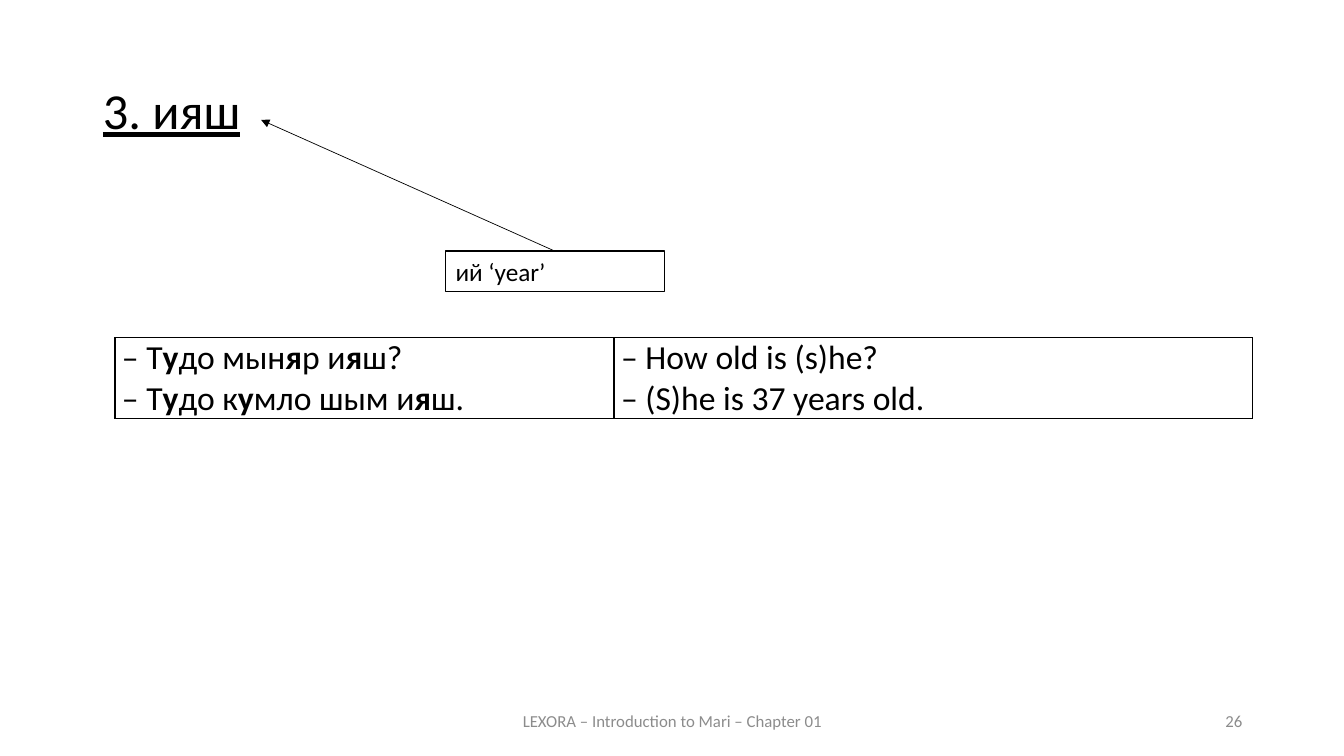
from dataclasses import dataclass

from lxml import etree
from pptx import Presentation
from pptx.dml.color import RGBColor
from pptx.enum import shapes, text
from pptx.oxml import ns
from pptx.util import Inches, Pt

FONT = "Calibri"
BLACK, GREY, WHITE = "000000", "8C8C8C", "FFFFFF"
ALIGN = text.PP_ALIGN


@dataclass
class FooterText:
    left: float
    width: float
    words: str
    align: ALIGN


FOOTERS = [
    FooterText(4.42, 4.5, "LEXORA – Introduction to Mari – Chapter 01", ALIGN.CENTER),
    FooterText(9.42, 3, "26", ALIGN.RIGHT),
]

# Asterisks enclose the stressed vowels, which are set in bold
DIALOGUE = [
    ["– Т*у*до мын*я*р и*я*ш?", "– Т*у*до к*у*мло шым и*я*ш."],
    ["– How old is (s)he?", "– (S)he is 37 years old."],
]
COLUMN_WIDTHS = [4.95, 6.33]


def rgb(value: str) -> RGBColor:
    return RGBColor.from_string(value)


def write(p, words: str, size: float, color: str = BLACK, align=None) -> None:
    """Fill a paragraph, with bold for the parts between asterisks."""
    p.alignment = align
    for i, part in enumerate(words.split("*")):
        r = p.add_run()
        r.text = part
        r.font.name, r.font.size = FONT, Pt(size)
        r.font.bold = i % 2 == 1
        r.font.color.rgb = rgb(color)


def add_footer(s, footer: FooterText) -> None:
    sp = s.shapes.add_textbox(Inches(footer.left), Inches(6.95),
                              Inches(footer.width), Inches(0.4))
    tf = sp.text_frame
    tf.word_wrap = True
    tf.vertical_anchor = text.MSO_ANCHOR.MIDDLE
    write(tf.paragraphs[0], footer.words, 12, GREY, footer.align)


def add_borders(cell) -> None:
    """Draw a thin black line on each side of a cell."""
    tc_pr = cell._tc.get_or_add_tcPr()
    for i, side in enumerate(("lnL", "lnR", "lnT", "lnB")):
        ln = etree.Element(ns.qn(f"a:{side}"), w=str(Pt(1)))
        fill = etree.SubElement(ln, ns.qn("a:solidFill"))
        etree.SubElement(fill, ns.qn("a:srgbClr"), val=BLACK)
        tc_pr.insert(i, ln)


def add_dialogue(s) -> None:
    table = s.shapes.add_table(1, len(DIALOGUE), Inches(1.14), Inches(3.35),
                               Inches(sum(COLUMN_WIDTHS)), Inches(0.8)).table
    table.first_row = table.horz_banding = False
    for column, width, cell, lines in zip(table.columns, COLUMN_WIDTHS,
                                          table.rows[0].cells, DIALOGUE):
        column.width = Inches(width)
        cell.margin_left = cell.margin_right = Inches(0.07)
        cell.margin_top = cell.margin_bottom = 0
        cell.fill.background()
        add_borders(cell)
        tf = cell.text_frame
        for i, line in enumerate(lines):
            p = tf.add_paragraph() if i else tf.paragraphs[0]
            write(p, line, 24, align=ALIGN.JUSTIFY)


def add_gloss(s) -> None:
    sp = s.shapes.add_shape(shapes.MSO_SHAPE.RECTANGLE, Inches(4.42), Inches(2.49),
                            Inches(2.17), Inches(0.4))
    sp.shadow.inherit = False
    sp.fill.solid()
    sp.fill.fore_color.rgb = rgb(WHITE)
    sp.line.color.rgb = rgb(BLACK)
    sp.line.width = Pt(1)
    tf = sp.text_frame
    tf.word_wrap = True
    tf.vertical_anchor = text.MSO_ANCHOR.TOP
    write(tf.paragraphs[0], "ий ‘year’", 18, align=ALIGN.LEFT)


def add_arrow(s) -> None:
    arrow = s.shapes.add_connector(shapes.MSO_CONNECTOR.STRAIGHT, Inches(5.5),
                                   Inches(2.49), Inches(2.59), Inches(1.19))
    arrow.line.color.rgb = rgb(BLACK)
    arrow.line.width = Pt(0.5)
    etree.SubElement(arrow.line._get_or_add_ln(), ns.qn("a:tailEnd"), type="triangle")
    etree.SubElement(arrow._element.spPr, ns.qn("a:effectLst"))


def main() -> None:
    prs = Presentation()
    prs.slide_width, prs.slide_height = Inches(13.33), Inches(7.5)
    s = prs.slides.add_slide(prs.slide_layouts[5])

    # Title
    title = s.shapes.title
    title.left, title.top = Inches(0.92), Inches(0.4)
    title.width, title.height = Inches(11.5), Inches(1.45)
    title.text_frame.vertical_anchor = text.MSO_ANCHOR.MIDDLE
    p = title.text_frame.paragraphs[0]
    write(p, "3. ияш", 36, align=ALIGN.JUSTIFY)
    p.runs[0].font.underline = True
    p.line_spacing, p.space_before = 0.9, Pt(18)

    # Footer and slide number
    for footer in FOOTERS:
        add_footer(s, footer)

    # Dialogue, then the gloss with its arrow to the title
    add_dialogue(s)
    add_gloss(s)
    add_arrow(s)

    prs.save("out.pptx")


if __name__ == "__main__":
    main()
